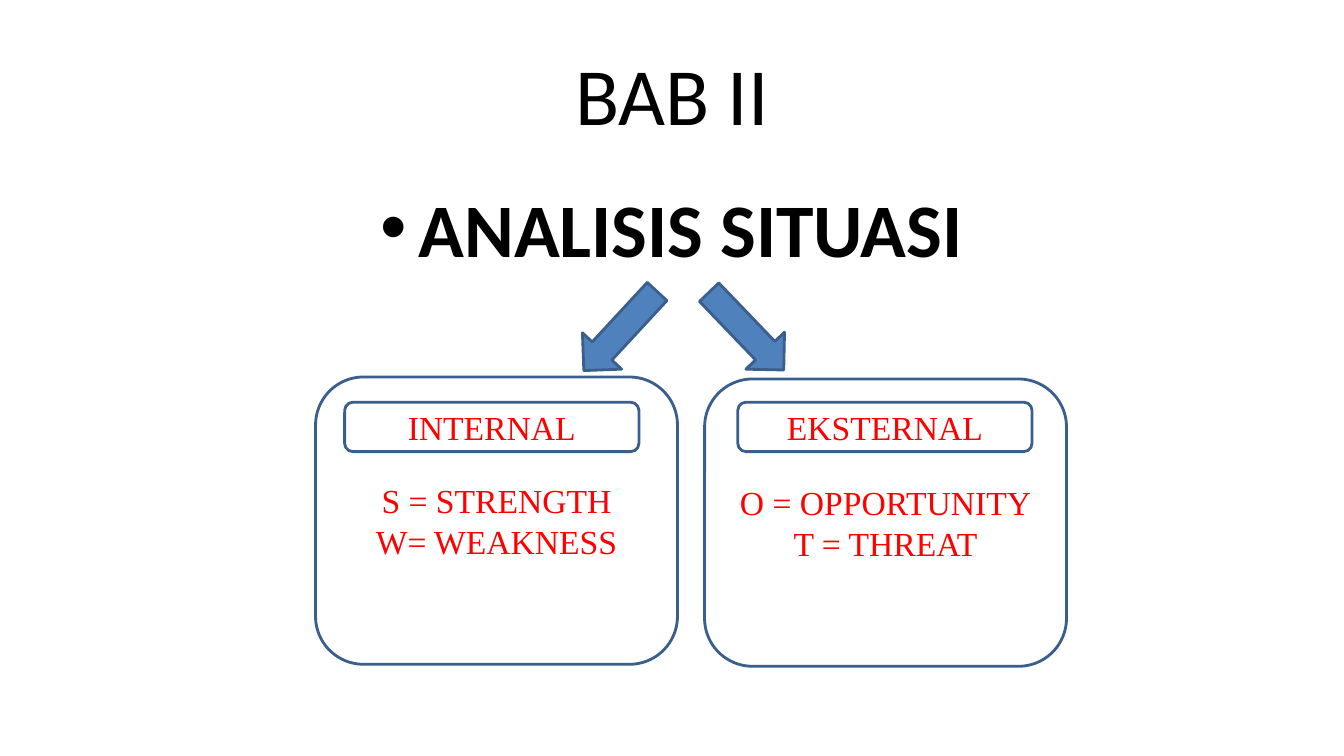
import pptx
import pptx.dml.color
import pptx.enum.shapes
import pptx.enum.text
import pptx.util
from lxml import etree

# Content
CHAPTER = "BAB II"
TOPIC = "ANALISIS SITUASI"
# Heading, lines, panel left and top, heading left, arrow left and rotation
FACTORS = [
    ("INTERNAL", ["S = STRENGTH", "W= WEAKNESS"], 225.4, 269.3, 246.2, 424.1, 42.8),
    ("EKSTERNAL", ["O = OPPORTUNITY", "T = THREAT"], 503.3, 270.7, 527, 514.1, 316.2),
]

# Format
BLACK, RED, BLUE, OUTLINE = "000000", "FF0000", "4F81BD", "3A5F8C"
CHAPTER_FONT = {"name": "Calibri", "size": 58, "bold": False, "color": BLACK}
TOPIC_FONT = {"name": "Calibri", "size": 54, "bold": True, "color": BLACK}
FACTOR_FONT = {"name": "Times New Roman", "size": 24, "bold": False, "color": RED}
PANEL_SIZE = (258.5, 205.2)
HEADING_TOP, HEADING_SIZE = 287.3, (210.2, 35.3)
ARROW_TOP, ARROW_SIZE = 198, (38.2, 77)

Pt = pptx.util.Pt
SHAPES = pptx.enum.shapes.MSO_SHAPE
ANCHOR = pptx.enum.text.MSO_ANCHOR


def paint(color_format, hex_color):
    color_format.rgb = pptx.dml.color.RGBColor.from_string(hex_color)


def place(shape, left, top, width, height):
    box = {"left": left, "top": top, "width": width, "height": height}
    for side, value in box.items():
        setattr(shape, side, Pt(value))


def write(shape, lines, font_format, anchor):
    frame = shape.text_frame
    frame.text = "\n".join(lines)
    frame.word_wrap = True
    frame.auto_size = pptx.enum.text.MSO_AUTO_SIZE.NONE
    frame.vertical_anchor = anchor
    for paragraph in frame.paragraphs:
        paragraph.alignment = pptx.enum.text.PP_ALIGN.CENTER
        paragraph.space_before = Pt(0)
        for key, value in font_format.items():
            if key == "color":
                paint(paragraph.font.color, value)
            else:
                setattr(paragraph.font, key, Pt(value) if key == "size" else value)


def add_outlined(kind, left, top, size, fill=None):
    shape = slide.shapes.add_shape(kind, Pt(left), Pt(top), Pt(size[0]), Pt(size[1]))
    shape.shadow.inherit = False
    if fill:
        shape.fill.solid()
        paint(shape.fill.fore_color, fill)
    else:
        shape.fill.background()
    paint(shape.line.color, OUTLINE)
    shape.line.width = Pt(2)
    return shape


deck = pptx.Presentation()
deck.slide_width, deck.slide_height = Pt(960), Pt(540)
slide = deck.slides.add_slide(deck.slide_layouts[1])

# Chapter and topic
chapter, topic = slide.placeholders
place(chapter, 48, 21.6, 864, 90)
write(chapter, [CHAPTER], CHAPTER_FONT, ANCHOR.MIDDLE)
place(topic, 48, 126, 864, 356.4)
topic.text_frame.text = TOPIC
topic_format = topic.text_frame.paragraphs[0]._p.get_or_add_pPr()
topic_format.set("marL", "0")
topic_format.set("indent", "0")
etree.SubElement(topic_format, pptx.oxml.ns.qn("a:buNone"))
write(topic, [TOPIC], TOPIC_FONT, ANCHOR.TOP)

# Arrow, panel and heading for each group of factors
for heading, lines, panel_left, panel_top, heading_left, arrow_left, turn in FACTORS:
    arrow = add_outlined(SHAPES.DOWN_ARROW, arrow_left, ARROW_TOP, ARROW_SIZE, BLUE)
    arrow.rotation = turn
    panel = add_outlined(SHAPES.ROUNDED_RECTANGLE, panel_left, panel_top, PANEL_SIZE)
    write(panel, lines, FACTOR_FONT, ANCHOR.MIDDLE)
    label = add_outlined(SHAPES.ROUNDED_RECTANGLE, heading_left, HEADING_TOP, HEADING_SIZE)
    write(label, [heading], FACTOR_FONT, ANCHOR.MIDDLE)

deck.save("out.pptx")
